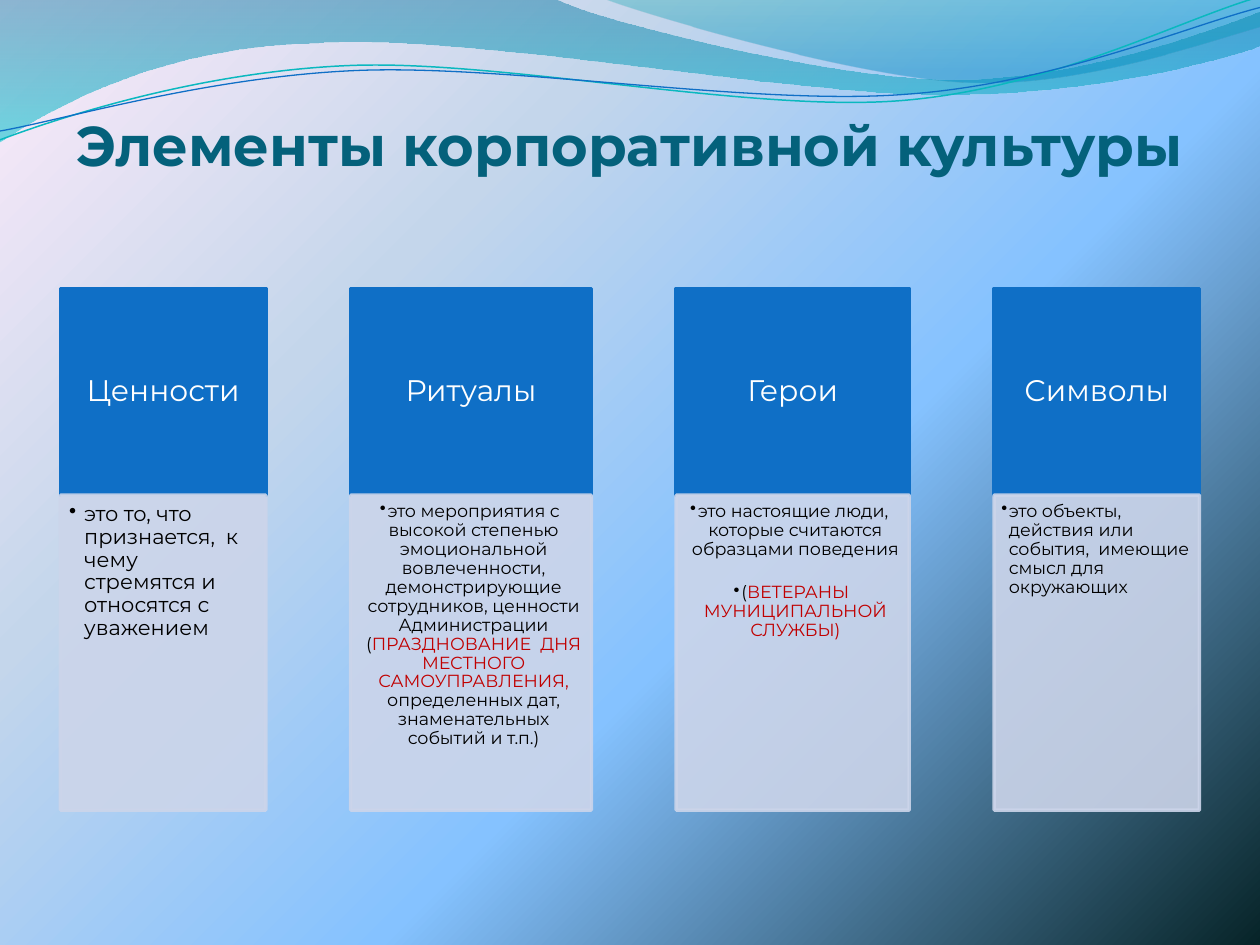
from math import cos, radians, sin
from lxml.etree import SubElement
from pptx import Presentation
from pptx.dml.color import RGBColor
from pptx.enum.shapes import MSO_SHAPE
from pptx.enum.text import MSO_ANCHOR, PP_ALIGN
from pptx.oxml.ns import qn
from pptx.util import Inches, Pt

W, H = 10, 7.5
FONT = "Montserrat"
BLUE, PALE, BLACK, RED, WHITE, TEAL = "0F6FC6", "CCD5EA", "000000", "C00000", "FFFFFF", "04617B"
LEFT, CENTER = PP_ALIGN.LEFT, PP_ALIGN.CENTER

# Content
TITLE = "Элементы корпоративной культуры"
# heading, width, text size, indent, alignment, paragraphs of (text, colour) runs
COLUMNS = [
    ("Ценности", 1.63, 12, 0.12, LEFT,
     [[("это то, что признается,  к чему стремятся и относятся с уважением", BLACK)]]),
    ("Ритуалы", 1.91, 10, 0.06, CENTER,
     [[("это мероприятия с высокой степенью эмоциональной вовлеченности, "
        "демонстрирующие сотрудников, ценности Администрации (", BLACK),
       ("ПРАЗДНОВАНИЕ  ДНЯ МЕСТНОГО САМОУПРАВЛЕНИЯ, ", RED),
       ("определенных дат, знаменательных событий и т.п.)", BLACK)]]),
    ("Герои", 1.85, 10, 0.06, CENTER,
     [[("это настоящие люди,  которые считаются образцами поведения", BLACK)],
      [("(", BLACK), ("ВЕТЕРАНЫ МУНИЦИПАЛЬНОЙ СЛУЖБЫ)", RED)]]),
    ("Символы", 1.63, 10, 0.06, LEFT,
     [[("это объекты, действия или события,  имеющие смысл для окружающих", BLACK)]]),
]
MARGIN, TOP, HEAD_H, BODY_H = 0.48, 2.29, 1.64, 2.5

# Gradient stops: position, colour, opacity (all in percent)
BACKGROUND = [(0, "072428", 58), (40, "85C2FF", 100), (70, "C4D6EB", 100), (100, "FFEBFA", 100)]

# Waves: one point is a straight step, three points are a Bezier curve
FILLED_WAVES = [
    ([[(0, 0)], [(4.4, -0.01)],
      [(4.76, 0.17), (6.64, 0.63), (7.58, 0.63)], [(8.53, 0.63), (9.58, 0.26), (10, 0.09)],
      [(10.01, 0.36)],
      [(9.83, 0.44), (8.7, 0.76), (7.46, 0.75)], [(6.22, 0.75), (3.82, 0.28), (2.57, 0.34)],
      [(1.29, 0.36), (0.46, 0.83), (-0.01, 1.13)]],
     [(0, "0074A1", 45), (100, "00C6CF", 55)]),
    ([[(4.79, -0.01)],
      [(5.09, 0.11), (6.82, 0.62), (7.69, 0.65)], [(8.56, 0.69), (9.61, 0.32), (10, 0.21)],
      [(10, 0)]],
     [(0, "00A1A9", 30), (80, "008BBF", 45)]),
]
LINE_TILT = -2.7
# path, centre of the tilt, colour, width
LINE_WAVES = [
    ([[(0, 1.11)],
      [(0.48, 0.93), (1.58, 0.57), (2.77, 0.52)], [(3.95, 0.47), (5.93, 0.89), (7.13, 0.8)],
      [(8.33, 0.71), (9.38, 0.15), (9.98, -0.02)]], (4.99, 0.57), "0AB8BF", 0.85),
    ([[(0, 1.04)],
      [(0.47, 0.96), (1.64, 0.61), (2.83, 0.56)], [(4.03, 0.51), (5.97, 0.84), (7.17, 0.75)],
      [(8.36, 0.67), (9.41, 0.21), (10, 0.06)]], (5, 0.59), BLUE, 0.75),
]


def rgb(value):
    return RGBColor.from_string(value)


def add_alpha(clr, percent):
    SubElement(clr, qn("a:alpha"), val=str(percent * 1000))


def set_stops(fill, stops):
    """Fill with a top-to-bottom gradient and return its XML element."""
    fill.gradient()
    fill.gradient_angle = 270
    gs_list = fill.gradient_stops[0]._gs.getparent()
    for gs in list(gs_list):
        gs_list.remove(gs)
    for pos, colour, opacity in stops:
        gs = SubElement(gs_list, qn("a:gs"), pos=str(pos * 1000))
        clr = SubElement(gs, qn("a:srgbClr"), val=colour)
        if opacity < 100:
            add_alpha(clr, opacity)
    return gs_list.getparent()


def turn(point, centre, degrees):
    a = radians(degrees)
    dx, dy = point[0] - centre[0], point[1] - centre[1]
    return centre[0] + dx * cos(a) - dy * sin(a), centre[1] + dx * sin(a) + dy * cos(a)


def add_wave(path, close):
    """Build a freeform, then join the points of each curve into one Bezier step."""
    pts = [(Inches(x), Inches(y)) for step in path for x, y in step]
    builder = s.shapes.build_freeform(*pts[0])
    builder.add_line_segments(pts[1:], close=close)
    sp = builder.convert_to_shape()
    sp.shadow.inherit = False
    lines = iter(list(sp._element.iter(qn("a:lnTo"))))
    for step in path[1:]:
        parts = [next(lines) for _ in step]
        if len(parts) == 3:
            curve = parts[0].makeelement(qn("a:cubicBezTo"))
            parts[0].addprevious(curve)
            for part in parts:
                curve.append(part[0])
                part.getparent().remove(part)
    return sp


def set_frame(sp, anchor, insets):
    tf = sp.text_frame
    sides = ("margin_left", "margin_top", "margin_right", "margin_bottom")
    values = dict(zip(sides, map(Inches, insets)), word_wrap=True, vertical_anchor=anchor)
    for name, value in values.items():
        setattr(tf, name, value)
    return tf


def add_run(p, text, size, colour, bold=False):
    r = p.add_run()
    r.text = text
    for name, value in dict(name=FONT, size=Pt(size), bold=bold).items():
        setattr(r.font, name, value)
    r.font.color.rgb = rgb(colour)


def format_paragraph(p, **values):
    for name, value in values.items():
        setattr(p, name, value)


def add_box(x, y, w, h, colour, opacity=100):
    sp = s.shapes.add_shape(MSO_SHAPE.RECTANGLE, *map(Inches, (x, y, w, h)))
    sp.shadow.inherit = False
    sp.fill.solid()
    sp.fill.fore_color.rgb = rgb(colour)
    sp.line.color.rgb = rgb(colour)
    sp.line.width = Pt(2)
    if opacity < 100:
        for clr in sp._element.spPr.iter(qn("a:srgbClr")):
            add_alpha(clr, opacity)
    return sp


prs = Presentation()
prs.slide_width, prs.slide_height = Inches(W), Inches(H)
s = prs.slides.add_slide(prs.slide_layouts[6])

# Background: circular gradient centred on the bottom right corner
grad = set_stops(s.background.fill, BACKGROUND)
grad.remove(grad.find(qn("a:lin")))
circle = SubElement(grad, qn("a:path"), path="circle")
SubElement(circle, qn("a:fillToRect"), l="100000", t="100000")

# Waves
for path, stops in FILLED_WAVES:
    sp = add_wave(path, True)
    set_stops(sp.fill, stops)
    sp.line.fill.background()
for path, centre, colour, width in LINE_WAVES:
    level = [[turn(point, centre, -LINE_TILT) for point in step] for step in path]
    sp = add_wave(level, False)
    sp.rotation = LINE_TILT
    sp.fill.background()
    sp.line.color.rgb = rgb(colour)
    sp.line.width = Pt(width)

# Title
tb = s.shapes.add_textbox(0, Inches(0.55), Inches(W), Inches(0.86))
p = set_frame(tb, MSO_ANCHOR.BOTTOM, (0, 0.05, 0, 0)).paragraphs[0]
p.alignment = CENTER
add_run(p, TITLE, 32, TEAL, bold=True)

# Columns with equal gaps between the margins
gap = (W - 2 * MARGIN - sum(col[1] for col in COLUMNS)) / (len(COLUMNS) - 1)
x = MARGIN
for heading, w, size, indent, align, paragraphs in COLUMNS:
    head = add_box(x, TOP, w, HEAD_H, BLUE)
    p = set_frame(head, MSO_ANCHOR.MIDDLE, (0.13, 0.08, 0.13, 0.08)).paragraphs[0]
    format_paragraph(p, alignment=CENTER, line_spacing=0.9)
    add_run(p, heading, 17, WHITE)

    body = add_box(x, TOP + HEAD_H, w, BODY_H, PALE, 90)
    pad = size / 175
    tf = set_frame(body, MSO_ANCHOR.TOP, (pad, pad, pad + 0.02, pad + 0.03))
    for i, runs in enumerate(paragraphs):
        p = tf.add_paragraph() if i else tf.paragraphs[0]
        pPr = p._p.get_or_add_pPr()
        pPr.set("marL", str(Inches(indent)))
        pPr.set("indent", str(-Inches(indent)))
        SubElement(pPr, qn("a:buChar"), char="•")
        format_paragraph(p, level=1, alignment=align, line_spacing=0.9,
                         space_before=Pt(12.5 if i else 0), space_after=Pt(size * 0.15))
        for text, colour in runs:
            add_run(p, text, size, colour)
    x += w + gap

prs.save("out.pptx")
